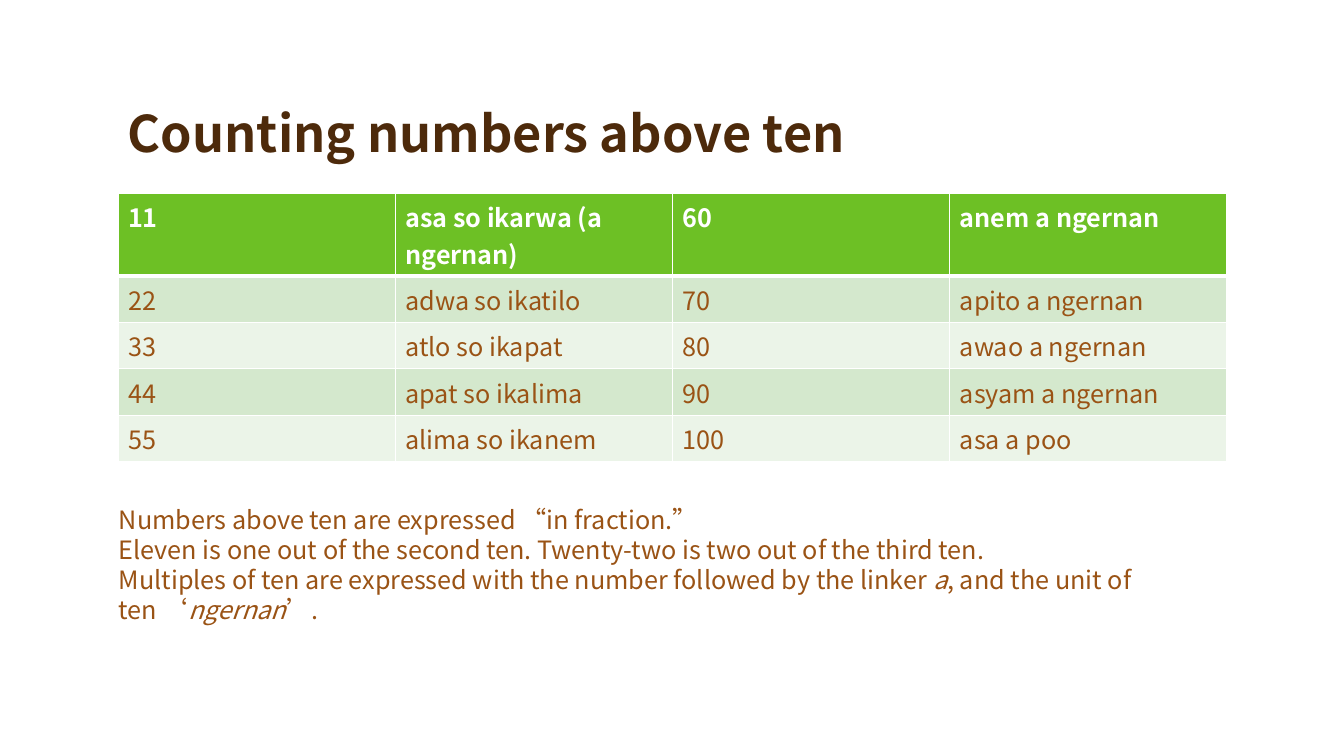
from lxml import etree
from pptx import Presentation
from pptx.dml.color import RGBColor
from pptx.enum.text import MSO_ANCHOR
from pptx.oxml.ns import qn
from pptx.util import Inches, Pt

BOTTOM, TOP = MSO_ANCHOR.BOTTOM, MSO_ANCHOR.TOP
FONT = "Noto Sans CJK TC"
WHITE = RGBColor(0xFF, 0xFF, 0xFF)
DARK_BROWN = RGBColor(0x4D, 0x2A, 0x0B)
BROWN = RGBColor(0x9A, 0x53, 0x15)
GREEN = RGBColor(0x6D, 0xC0, 0x25)
BAND_DARK = RGBColor(0xD4, 0xE8, 0xCD)
BAND_LIGHT = RGBColor(0xEB, 0xF4, 0xE8)

HEADER_HEIGHT, ROW_HEIGHT = 0.82, 0.46
NUMBERS = [
    ("11", "asa so ikarwa (a ngernan)", "60", "anem a ngernan"),
    ("22", "adwa so ikatilo", "70", "apito a ngernan"),
    ("33", "atlo so ikapat", "80", "awao a ngernan"),
    ("44", "apat so ikalima", "90", "asyam a ngernan"),
    ("55", "alima so ikanem", "100", "asa a poo"),
]
# Each paragraph alternates upright and italic pieces
NOTES = [
    ["Numbers above ten are expressed “in fraction.”"],
    ["Eleven is one out of the second ten. Twenty-two is two out of the third ten."],
    ["Multiples of ten are expressed with the number followed by the linker ",
     "a", ", and the unit of ten ‘", "ngernan", "’."],
]


def write(p, text, size=18, color=BROWN, bold=False, italic=False):
    r = p.add_run()
    r.text = text
    r.font.name = FONT
    r.font.size = Pt(size)
    r.font.color.rgb = color
    r.font.bold = bold
    r.font.italic = italic


def add_box(s, left, top, width, height, anchor=TOP):
    sp = s.shapes.add_textbox(Inches(left), Inches(top), Inches(width), Inches(height))
    tf = sp.text_frame
    tf.word_wrap = True
    tf.vertical_anchor = anchor
    return tf


def set_borders(cell, bottom):
    tcPr = cell._tc.get_or_add_tcPr()
    widths = {"lnL": 1, "lnR": 1, "lnT": 1, "lnB": bottom}
    for i, (side, width) in enumerate(widths.items()):
        ln = etree.Element(qn("a:" + side), w=str(Pt(width)))
        fill = etree.SubElement(ln, qn("a:solidFill"))
        etree.SubElement(fill, qn("a:srgbClr"), val=str(WHITE))
        tcPr.insert(i, ln)


def add_number_table(s):
    rows, cols = len(NUMBERS), len(NUMBERS[0])
    height = HEADER_HEIGHT + ROW_HEIGHT * (rows - 1)
    table = s.shapes.add_table(rows, cols, Inches(1.17), Inches(1.92),
                               Inches(11), Inches(height)).table
    for i, row in enumerate(NUMBERS):
        header = i == 0
        band = BAND_DARK if i % 2 else BAND_LIGHT
        table.rows[i].height = Inches(HEADER_HEIGHT if header else ROW_HEIGHT)
        for j, text in enumerate(row):
            cell = table.cell(i, j)
            cell.fill.solid()
            cell.fill.fore_color.rgb = GREEN if header else band
            set_borders(cell, bottom=3 if header else 1)
            write(cell.text_frame.paragraphs[0], text,
                  color=WHITE if header else BROWN, bold=header)


def add_notes(s):
    tf = add_box(s, 1.08, 4.96, 10.61, 1.31)
    for i, pieces in enumerate(NOTES):
        p = tf.add_paragraph() if i else tf.paragraphs[0]
        p.line_spacing = Pt(21.4)
        for j, text in enumerate(pieces):
            write(p, text, italic=j % 2 == 1)


def main():
    prs = Presentation()
    prs.slide_width, prs.slide_height = Inches(13.33), Inches(7.5)
    s = prs.slides.add_slide(prs.slide_layouts[6])

    # Title
    p = add_box(s, 1.17, 0.34, 11, 1.33, anchor=BOTTOM).paragraphs[0]
    p.line_spacing = 0.9
    write(p, "Counting numbers above ten", size=36, color=DARK_BROWN, bold=True)

    # Number table and explanation
    add_number_table(s)
    add_notes(s)
    prs.save("out.pptx")


if __name__ == "__main__":
    main()
